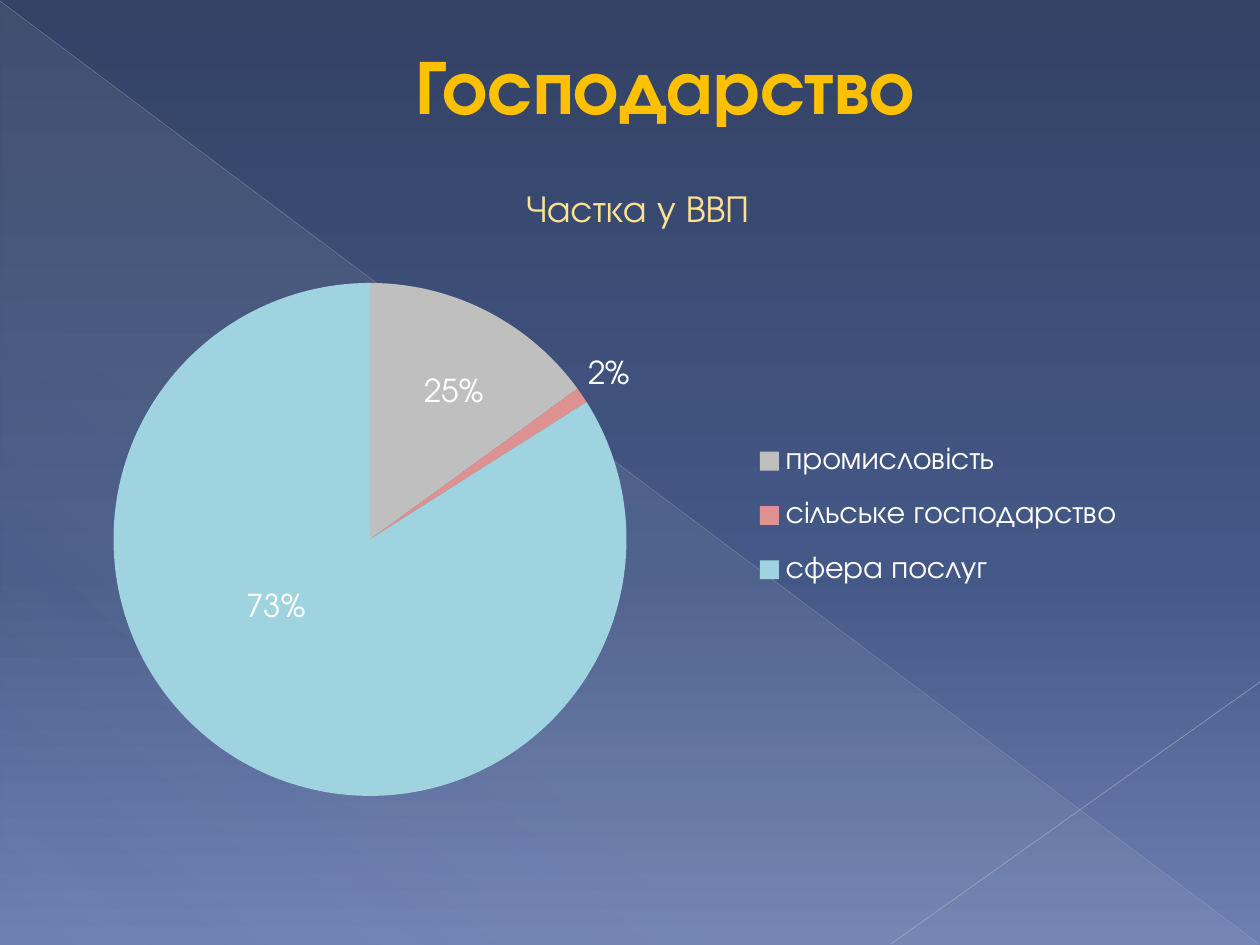
from lxml import etree
from pptx import Presentation
from pptx.chart.data import CategoryChartData
from pptx.dml.color import RGBColor
from pptx.enum.chart import XL_CHART_TYPE, XL_LABEL_POSITION, XL_LEGEND_POSITION
from pptx.enum.shapes import MSO_CONNECTOR, MSO_SHAPE
from pptx.enum.text import MSO_ANCHOR, PP_ALIGN
from pptx.oxml import parse_xml
from pptx.oxml.ns import nsdecls, qn
from pptx.util import Pt

PIE = XL_CHART_TYPE.PIE
LABEL_CENTER = XL_LABEL_POSITION.CENTER
LABEL_OUTSIDE = XL_LABEL_POSITION.OUTSIDE_END
LEGEND_RIGHT = XL_LEGEND_POSITION.RIGHT
STRAIGHT = MSO_CONNECTOR.STRAIGHT
RIGHT_TRIANGLE = MSO_SHAPE.RIGHT_TRIANGLE
MIDDLE = MSO_ANCHOR.MIDDLE
CENTER = PP_ALIGN.CENTER

FONT = "TeX Gyre Adventor"
WHITE = "FFFFFF"
TITLE_LAYOUT = 5

# category, value, colour, label, label position, label shift in px
SECTORS = [
    ("промисловість", 15, "BFBFBF", "25%", LABEL_CENTER, (26, -31)),
    ("сільське господарство", 1, "DD9191", "2%", LABEL_OUTSIDE, None),
    ("сфера послуг", 84, "A0D3E0", "73%", LABEL_CENTER, (-32, -43)),
]


def px(length):
    return round(length * 914400 / 126)


def box_emu(box):
    return [px(length) for length in box]


def rgb(color):
    return RGBColor.from_string(color)


def format_font(font, size=18, color=WHITE, bold=False):
    font.name = FONT
    font.size = Pt(size)
    font.bold = bold
    font.color.rgb = rgb(color)


def write_text(frame, text, align=None, **style):
    paragraph = frame.paragraphs[0]
    paragraph.alignment = align
    run = paragraph.add_run()
    run.text = text
    format_font(run.font, **style)
    return run


def add_alpha(color_element, percent):
    etree.SubElement(color_element, qn("a:alpha")).set("val", str(percent * 1000))


def set_gradient(fill, owner, stops, angle):
    """Stops are (position %, colour, opacity %)."""
    fill.gradient()
    gradient = owner.find(".//" + qn("a:gradFill"))
    stop_list = gradient.find(qn("a:gsLst"))
    for old_stop in list(stop_list):
        stop_list.remove(old_stop)
    for position, color, opacity in stops:
        stop = etree.SubElement(stop_list, qn("a:gs"), pos=str(position * 1000))
        color_element = etree.SubElement(stop, qn("a:srgbClr"), val=color)
        if opacity < 100:
            add_alpha(color_element, opacity)
    direction = gradient.find(qn("a:lin"))
    direction.set("ang", str(angle * 60000))
    direction.set("scaled", "0")


def add_ray(slide, start, end, color, width, opacity):
    ray = slide.shapes.add_connector(STRAIGHT, *box_emu(start + end))
    ray.line.color.rgb = rgb(color)
    ray.line.width = Pt(width)
    properties = ray._element.spPr
    add_alpha(properties.find(".//" + qn("a:srgbClr")), opacity)
    etree.SubElement(properties, qn("a:effectLst"))


def add_backdrop(slide, box):
    left, top, width, height = box
    right, bottom = left + width, top + height
    set_gradient(slide.background.fill, slide.element,
                 [(0, "334265", 100), (60, "445887", 100), (100, "6C7FB1", 100)], 90)

    # Pale corner
    corner = slide.shapes.add_shape(
        RIGHT_TRIANGLE, *box_emu((left + 1, top + 2, width - 2, height - 2)))
    corner.shadow.inherit = False
    corner.line.fill.background()
    set_gradient(corner.fill, corner._element.spPr,
                 [(0, "D4D4D6", 10), (70, "D4D4D6", 8), (100, "D4D4D6", 1)], 133)

    # Thin rays
    add_ray(slide, (left, top + 1), (right - 1, bottom - 1), "B9BDC8", 0.39, 35)
    add_ray(slide, (right, top + 682), (left + 891, bottom - 1), "C1C4CE", 0.47, 45)


def add_title(slide, box):
    title = slide.shapes.title
    title.left, title.top, title.width, title.height = box_emu(box)
    frame = title.text_frame
    frame.word_wrap = True
    frame.vertical_anchor = MIDDLE
    heading = write_text(frame, "Господарство", align=CENTER,
                         size=44, color="FFC000", bold=True)
    paragraph_properties = frame.paragraphs[0]._p.get_or_add_pPr()
    paragraph_properties.set("marL", str(px(67)))
    paragraph_properties.set("indent", "0")
    outline = parse_xml(
        f'<a:ln {nsdecls("a")} w="6350"><a:solidFill><a:srgbClr val="A67800"/>'
        "</a:solidFill></a:ln>")
    heading.font._element.insert(0, outline)


def set_layout(part, before, chart_size, place, edge=True, inner=False):
    """Puts a chart part at (left, top[, width, height]) px, after the child named before."""
    for old_layout in part.findall(qn("c:layout")):
        part.remove(old_layout)
    settings = [("layoutTarget", "inner")] if inner else []
    if edge:
        settings += [("xMode", "edge"), ("yMode", "edge")]
    settings += [(tag, length / whole)
                 for tag, length, whole in zip("xywh", place, chart_size * 2)]
    children = "".join(f'<c:{tag} val="{value}"/>' for tag, value in settings)
    layout = parse_xml(f'<c:layout {nsdecls("c")}><c:manualLayout>{children}'
                       "</c:manualLayout></c:layout>")
    if before:
        part.find(qn(before)).addnext(layout)
    else:
        part.insert(0, layout)


def add_gdp_chart(slide, box):
    size = box[2:]
    shares = CategoryChartData()
    shares.categories = [sector[0] for sector in SECTORS]
    shares.add_series("Series 1", [sector[1] for sector in SECTORS])
    chart = slide.shapes.add_chart(PIE, *box_emu(box), shares).chart
    format_font(chart.font)

    # Heading
    chart.has_title = True
    heading = chart.chart_title
    write_text(heading.text_frame, "Частка у ВВП", size=21.6, color="FFE193")
    heading.include_in_layout = False
    set_layout(heading._element, "c:tx", size, (456, 9))

    # Legend
    chart.has_legend = True
    legend = chart.legend
    legend.position = LEGEND_RIGHT
    legend.include_in_layout = False
    format_font(legend.font)
    set_layout(legend._element, "c:legendPos", size, (687, 247, 376, 187))

    # Sectors and their labels
    plot = chart.plots[0]
    plot.vary_by_categories = True
    plot.has_data_labels = True
    labels = plot.data_labels
    labels.show_percentage = True
    labels.show_value = False
    labels.number_format = "0%"
    labels.number_format_is_linked = False
    format_font(labels.font)
    for index, (_, _, color, text, position, shift) in enumerate(SECTORS):
        point = plot.series[0].points[index]
        point.format.fill.solid()
        point.format.fill.fore_color.rgb = rgb(color)
        point.format.line.fill.background()
        label = point.data_label
        write_text(label.text_frame, text)
        label.position = position
        if shift:
            set_layout(label._dLbl, "c:idx", size, shift, edge=False)
    set_layout(chart._chartSpace.chart.plotArea, None, size,
               (50, 108, 514, 513), inner=True)


def main():
    presentation = Presentation()
    presentation.slide_width = px(1260)
    presentation.slide_height = px(945)
    slide = presentation.slides.add_slide(presentation.slide_layouts[TITLE_LAYOUT])
    add_backdrop(slide, (0, 0, 1260, 945))
    add_title(slide, (65, 26, 1134, 116))
    add_gdp_chart(slide, (63, 175, 1134, 704))
    presentation.save("out.pptx")


if __name__ == "__main__":
    main()
